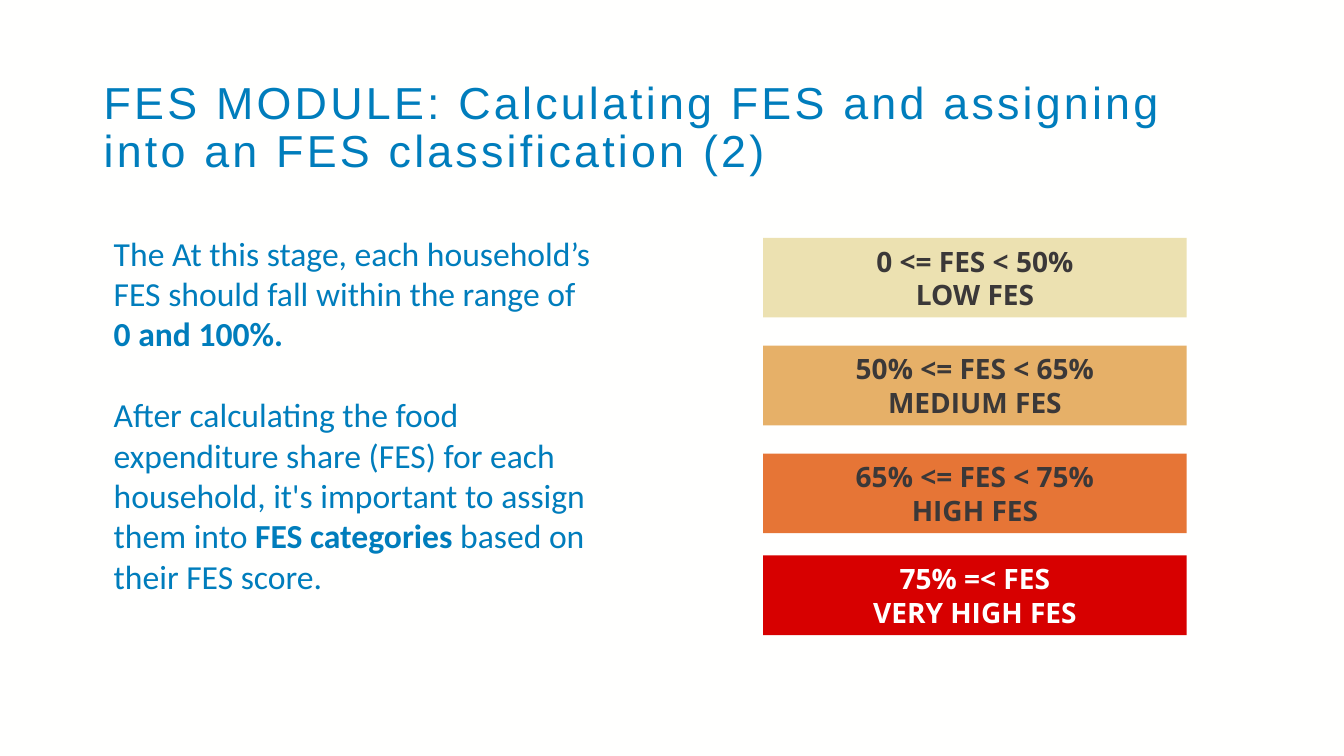
from pptx import Presentation
from pptx.dml.color import RGBColor
from pptx.enum.shapes import MSO_SHAPE
from pptx.enum.text import MSO_ANCHOR, PP_ALIGN
from pptx.util import Inches, Pt

RECTANGLE = MSO_SHAPE.RECTANGLE
TOP, MIDDLE = MSO_ANCHOR.TOP, MSO_ANCHOR.MIDDLE
LEFT, CENTER = PP_ALIGN.LEFT, PP_ALIGN.CENTER

BLUE, DARK, WHITE = "007DBC", "3B3838", "FFFFFF"
TITLE = "FES MODULE: Calculating FES and assigning into an FES classification (2)"
BODY = [
    [("The At this stage, each household’s FES should fall within the range of ", False),
     ("0 and 100%.", True)],
    [("After calculating the food expenditure share (FES) for each household, "
      "it's important to assign them into ", False),
     ("FES categories ", True),
     ("based on their FES score.", False)],
]
CATEGORIES = [
    (2.36, "0 <= FES < 50%", "LOW FES", "ECE1B1", DARK),
    (3.43, "50% <= FES < 65%", "MEDIUM FES", "E6B068", DARK),
    (4.5, "65% <= FES < 75%", "HIGH FES", "E67536", DARK),
    (5.51, "75% =< FES", "VERY HIGH FES", "D70000", WHITE),
]
BAND_LEFT, BAND_WIDTH, BAND_HEIGHT = 7.57, 4.2, 0.79


def color(value):
    return RGBColor.from_string(value)


def write(shape, paragraphs, size, font, text_color, align=LEFT, anchor=TOP):
    frame = shape.text_frame
    frame.word_wrap = True
    frame.vertical_anchor = anchor
    for index, runs in enumerate(paragraphs):
        paragraph = frame.add_paragraph() if index else frame.paragraphs[0]
        paragraph.alignment = align
        paragraph.font.size = Pt(size)
        paragraph.font.name = font
        paragraph.font.color.rgb = color(text_color)
        for text, bold in runs:
            run = paragraph.add_run()
            run.text = text
            run.font.size = Pt(size)
            run.font.name = font
            run.font.bold = bold
            run.font.color.rgb = color(text_color)
    return frame.paragraphs


def add_text(slide, left, top, width, height, *text):
    box = slide.shapes.add_textbox(Inches(left), Inches(top), Inches(width), Inches(height))
    return write(box, *text)


def add_band(slide, top, limits, name, fill, text_color):
    band = slide.shapes.add_shape(RECTANGLE, Inches(BAND_LEFT), Inches(top),
                                  Inches(BAND_WIDTH), Inches(BAND_HEIGHT))
    band.shadow.inherit = False
    band.fill.solid()
    band.fill.fore_color.rgb = color(fill)
    band.line.fill.background()
    write(band, [[(limits, True)], [(name, True)]], 20, "Open Sans", text_color, CENTER, MIDDLE)


def main():
    presentation = Presentation()
    presentation.slide_width = Inches(13.33)
    presentation.slide_height = Inches(7.5)
    slide = presentation.slides.add_slide(presentation.slide_layouts[6])
    slide.background.fill.solid()
    slide.background.fill.fore_color.rgb = color("FFFFFE")

    title = add_text(slide, 0.93, 0.75, 11.53, 1.26, [[(TITLE, False)]], 32, "Arial", BLUE)[0]
    title.line_spacing = 0.9
    title.runs[0].font._element.set("spc", "230")

    body = add_text(slide, 1.03, 2.26, 5, 3.74, BODY, 24, "Calibri", BLUE)
    body[1].space_before = Pt(29)

    for category in CATEGORIES:
        add_band(slide, *category)
    presentation.save("out.pptx")


if __name__ == "__main__":
    main()
